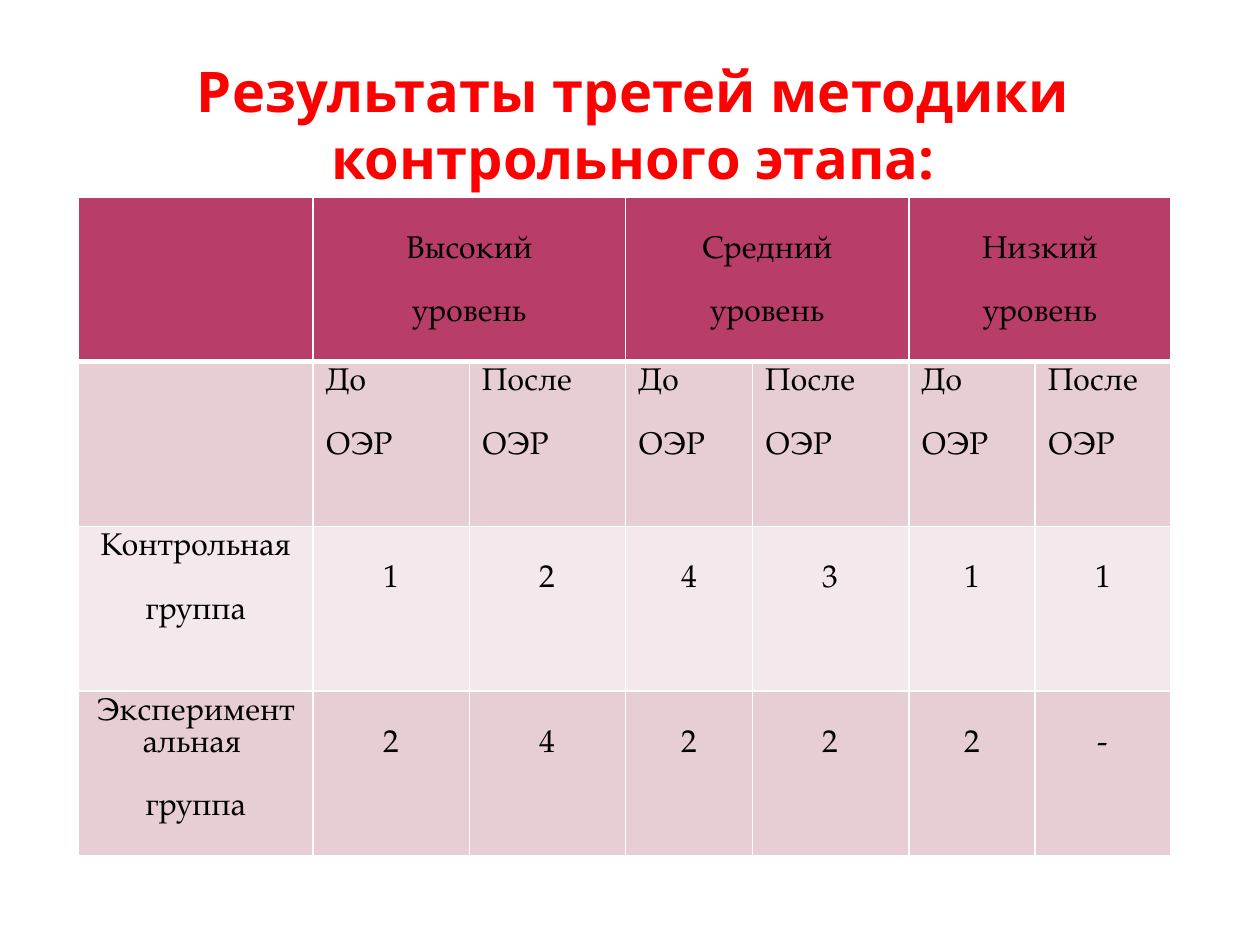
from dataclasses import dataclass

from lxml import etree
from pptx import Presentation
from pptx import util as u
from pptx.dml.color import RGBColor
from pptx.enum import text
from pptx.oxml.ns import qn

COLORS = {
    "title": "FF0000",
    "text": "000000",
    "border": "FFFFFF",
    "header": "B83D68",
    "dark_band": "E6CED4",
    "light_band": "F3E8EB",
}
TITLE_FORMAT = {"name": "Noto Sans", "size": u.Pt(32), "bold": True}
CELL_FORMAT = {"name": "TeX Gyre Pagella", "size": u.Pt(18), "bold": False}
LINE_GAP = u.Pt(18.25)
CELL_TOP = u.Cm(0.13)
LOWERED_TOP = u.Cm(0.77)
COLUMN_WIDTHS = [4.73, 3.15, 3.15, 2.56, 3.15, 2.55, 2.74]
ROW_HEIGHT = 3.32
CENTER = text.PP_ALIGN.CENTER
LEFT = text.PP_ALIGN.LEFT


@dataclass
class Row:
    label: list[str]
    values: list[list[str]]
    fill: str
    value_top: int = LOWERED_TOP
    alignment: text.PP_ALIGN = CENTER
    bottom_border: float = 1


LEVELS = ["Высокий", "Средний", "Низкий"]
ROWS = [
    Row([], [lines for level in LEVELS for lines in ([level, "уровень"], [])],
        "header", bottom_border=3),
    Row([], [["До", "ОЭР"], ["После", "ОЭР"]] * len(LEVELS),
        "dark_band", value_top=CELL_TOP, alignment=LEFT),
    Row(["Контрольная", "группа"], [[value] for value in "124311"], "light_band"),
    Row(["Экспериментальная ", "группа"], [[value] for value in "24222-"], "dark_band"),
]


def format_font(font, values: dict, color: str) -> None:
    for name, value in values.items():
        setattr(font, name, value)
    font.color.rgb = RGBColor.from_string(COLORS[color])


def add_borders(cell, bottom: float) -> None:
    properties = cell._tc.get_or_add_tcPr()
    for side, width in {"lnL": 1, "lnR": 1, "lnT": 1, "lnB": bottom}.items():
        line = etree.SubElement(properties, qn(f"a:{side}"), w=str(u.Pt(width)))
        fill = etree.SubElement(line, qn("a:solidFill"))
        etree.SubElement(fill, qn("a:srgbClr"), val=COLORS["border"])


def draw_cell(cell, lines: list[str], row: Row, top: int, alignment: text.PP_ALIGN) -> None:
    add_borders(cell, row.bottom_border)
    cell.fill.solid()
    cell.fill.fore_color.rgb = RGBColor.from_string(COLORS[row.fill])
    cell.margin_top, cell.margin_bottom = top, 0
    for index, line in enumerate(lines):
        frame = cell.text_frame
        paragraph = frame.add_paragraph() if index else frame.paragraphs[0]
        paragraph.alignment = alignment
        if index:
            paragraph.space_before = LINE_GAP
        run = paragraph.add_run()
        run.text = line
        format_font(run.font, CELL_FORMAT, "text")


def draw_title(shape, words: str) -> None:
    place = {"left": 1.4, "top": 1.4, "width": 22.73, "height": 2.18}
    for name, value in place.items():
        setattr(shape, name, u.Cm(value))
    frame = shape.text_frame
    frame.text = words
    frame.word_wrap = True
    frame.auto_size = text.MSO_AUTO_SIZE.NONE
    frame.vertical_anchor = text.MSO_ANCHOR.MIDDLE
    paragraph = frame.paragraphs[0]
    paragraph.alignment = CENTER
    format_font(paragraph.runs[0].font, TITLE_FORMAT, "title")


def draw_table(slide) -> None:
    table = slide.shapes.add_table(
        len(ROWS), len(COLUMN_WIDTHS), u.Cm(1.58), u.Cm(3.97),
        u.Cm(sum(COLUMN_WIDTHS)), u.Cm(ROW_HEIGHT * len(ROWS))).table
    for column, width in zip(table.columns, COLUMN_WIDTHS):
        column.width = u.Cm(width)
    for row_index, row in enumerate(ROWS):
        table.rows[row_index].height = u.Cm(ROW_HEIGHT)
        draw_cell(table.cell(row_index, 0), row.label, row, CELL_TOP, CENTER)
        for column, lines in enumerate(row.values, start=1):
            draw_cell(table.cell(row_index, column), lines, row, row.value_top, row.alignment)
    for column in range(1, len(COLUMN_WIDTHS), 2):
        table.cell(0, column).merge(table.cell(0, column + 1))


def main() -> None:
    presentation = Presentation()
    presentation.slide_width, presentation.slide_height = u.Cm(25.4), u.Cm(19.05)
    slide = presentation.slides.add_slide(presentation.slide_layouts[5])
    draw_title(slide.shapes.title, "Результаты третей методики контрольного этапа:")
    draw_table(slide)
    presentation.save("out.pptx")


if __name__ == "__main__":
    main()
